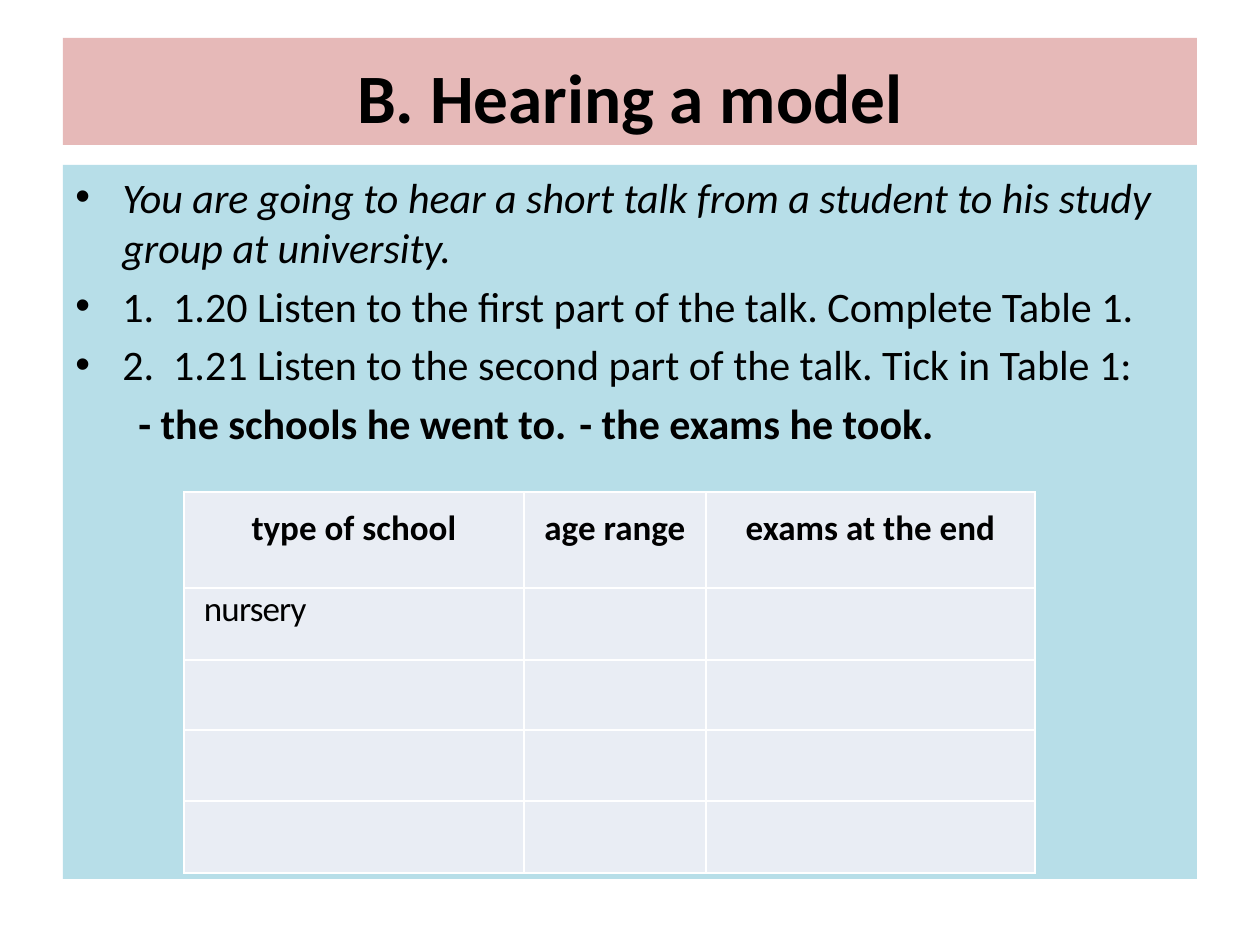
from dataclasses import dataclass

from lxml import etree
from pptx import Presentation
from pptx import util as u
from pptx.dml.color import RGBColor
from pptx.enum import shapes, text
from pptx.oxml.ns import qn

EMU_PER_PX = u.Inches(1) / 126


def px(length):
    return u.Emu(round(length * EMU_PER_PX))


@dataclass(frozen=True)
class Theme:
    font: str = "Calibri"
    ink: str = "000000"
    title_fill: str = "E6B9B8"
    body_fill: str = "B7DEE8"
    cell_fill: str = "E9EDF4"
    border: str = "FFFFFF"
    title_size: float = 39.6
    body_size: float = 24
    table_size: float = 20
    body_gap: float = 4.8


def paint(fill, color):
    fill.solid()
    fill.fore_color.rgb = RGBColor.from_string(color)


def write(paragraph, words, theme, size, bold=False, italic=False, align=text.PP_ALIGN.LEFT,
          before=0, line=None, left=0, hanging=0, bullet=None, tabs=(), tracking=0):
    """Fill a paragraph; left, hanging and tabs are px, other lengths are points."""
    paragraph.alignment = align
    paragraph.space_before = u.Pt(before)
    if line:
        paragraph.line_spacing = u.Pt(line)
    properties = paragraph._p.get_or_add_pPr()
    properties.set("marL", str(px(left)))
    properties.set("indent", str(px(-hanging)))
    if bullet:
        etree.SubElement(properties, qn("a:buFont"), typeface="Arial")
        etree.SubElement(properties, qn("a:buChar"), char=bullet)
    if tabs:
        stops = etree.SubElement(properties, qn("a:tabLst"))
        for stop in tabs:
            etree.SubElement(stops, qn("a:tab"), pos=str(px(stop)), algn="l")
    run = paragraph.add_run()
    run.text = words
    run.font.name = theme.font
    run.font.size = u.Pt(size)
    run.font.bold = bold
    run.font.italic = italic
    run.font.color.rgb = RGBColor.from_string(theme.ink)
    if tracking:
        run._r.get_or_add_rPr().set("spc", str(round(tracking * 100)))


class SlideBuilder:
    def __init__(self, slide, theme):
        self.slide = slide
        self.theme = theme

    def panel(self, left, top, width, height, color, paragraphs,
              anchor=text.MSO_ANCHOR.TOP, inset_top=6):
        """Add a filled rectangle holding (words, format) paragraphs."""
        panel = self.slide.shapes.add_shape(
            shapes.MSO_SHAPE.RECTANGLE, px(left), px(top), px(width), px(height))
        panel.shadow.inherit = False
        paint(panel.fill, color)
        panel.line.fill.background()
        frame = panel.text_frame
        frame.word_wrap = True
        frame.vertical_anchor = anchor
        frame.margin_top = px(inset_top)
        for index, (words, style) in enumerate(paragraphs):
            paragraph = frame.add_paragraph() if index else frame.paragraphs[0]
            write(paragraph, words, self.theme, **style)

    def table(self, left, top, widths, heights):
        table = self.slide.shapes.add_table(
            len(heights), len(widths), px(left), px(top),
            px(sum(widths)), px(sum(heights))).table
        table.first_row = table.horz_banding = False
        for column, width in zip(table.columns, widths):
            column.width = px(width)
        for row, height in zip(table.rows, heights):
            row.height = px(height)
        for cell in table.iter_cells():
            self.border(cell)
            paint(cell.fill, self.theme.cell_fill)
        return table

    def border(self, cell):
        properties = cell._tc.get_or_add_tcPr()
        for side in ("lnL", "lnR", "lnT", "lnB"):
            edge = etree.SubElement(properties, qn(f"a:{side}"), w=str(u.Pt(1)))
            fill = etree.SubElement(edge, qn("a:solidFill"))
            etree.SubElement(fill, qn("a:srgbClr"), val=self.theme.border)

    def cell_text(self, cell, words, inset_top=0, **style):
        cell.margin_left = cell.margin_right = px(1)
        cell.margin_top, cell.margin_bottom = px(inset_top), 0
        write(cell.text_frame.paragraphs[0], words, self.theme,
              size=self.theme.table_size, **style)


def main():
    theme = Theme()
    deck = Presentation()
    deck.slide_width, deck.slide_height = px(1260), px(945)
    builder = SlideBuilder(deck.slides.add_slide(deck.slide_layouts[6]), theme)

    centred = text.PP_ALIGN.CENTER
    builder.panel(63, 38, 1134, 107, theme.title_fill,
                  [("B. Hearing a model",
                    dict(size=theme.title_size, bold=True, align=centred))],
                  anchor=text.MSO_ANCHOR.MIDDLE, inset_top=14)

    plain = dict(size=theme.body_size, before=theme.body_gap)
    bulleted = dict(plain, left=47, hanging=47, bullet="•")
    builder.panel(63, 165, 1134, 714, theme.body_fill, [
        ("You are going to hear a short talk from a student to his study group at university.",
         dict(bulleted, italic=True)),
        ("1.  1.20 Listen to the first part of the talk. Complete Table 1.", bulleted),
        ("2.  1.21 Listen to the second part of the talk. Tick in Table 1:", bulleted),
        ("\t- the schools he went to.\t- the exams he took.",
         dict(plain, bold=True, tabs=(105, 570))),
    ])

    schools = builder.table(184, 492, widths=(340, 182, 329), heights=(96, 72, 70, 71, 72))
    for column, heading in enumerate(("type of school", "age range", "exams at the end")):
        builder.cell_text(schools.cell(0, column), heading, inset_top=34,
                          bold=True, align=centred, line=13.5)
    builder.cell_text(schools.cell(1, 0), "nursery", left=19, tracking=-0.5)

    deck.save("out.pptx")


if __name__ == "__main__":
    main()
